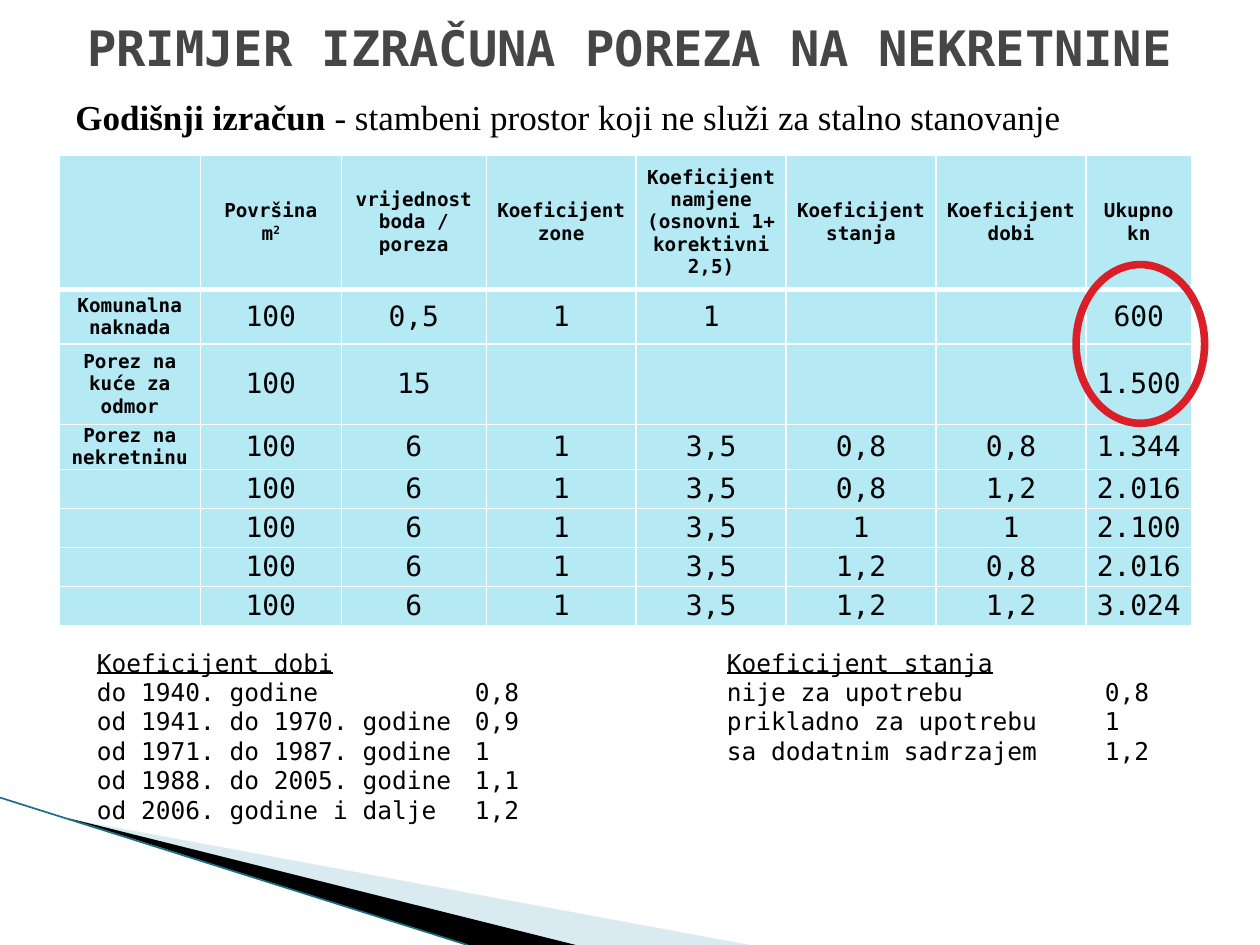
from typing import NamedTuple

from lxml.etree import SubElement
from pptx import Presentation
from pptx.dml.color import RGBColor
from pptx.enum.shapes import MSO_CONNECTOR as Connector, MSO_SHAPE as Shape
from pptx.enum.text import MSO_ANCHOR as Anchor, PP_ALIGN as Align
from pptx.oxml import parse_xml
from pptx.oxml.ns import nsdecls, qn
from pptx.util import Inches, Pt

COLORS = {
    "text": "000000", "title": "464646", "cell": "B5E9F4", "border": "FFFFFF",
    "ring": "DA1F28", "pale": "A0CBDC", "black": "000000", "edge": "1B6F82",
}
MONO, SERIF = "DejaVu Sans Mono", "Times New Roman"


class Wedge(NamedTuple):
    points: list[tuple[float, float]]
    color: str
    alpha: int


class Legend(NamedTuple):
    title: str
    entries: list[tuple[str, str]]


WEDGES = [
    Wedge([(0.55, 6.5), (5.95, 7.5), (4.56, 7.5)], "pale", 40),
    Wedge([(0.53, 6.49), (4.57, 7.5), (3.72, 7.5)], "black", 100),
]
COL_WIDTHS = [1.12, 1.12, 1.15, 1.19, 1.19, 1.19, 1.19, 0.84]
ROW_HEIGHTS = [1.07, 0.43, 0.64] + [0.31] * 5
ROWS = [
    ["", "Površina\nm²", "vrijednost boda / poreza", "Koeficijent zone",
     "Koeficijent namjene (osnovni 1+ korektivni 2,5)", "Koeficijent stanja",
     "Koeficijent dobi", "Ukupno\nkn"],
    ["Komunalna naknada", "100", "0,5", "1", "1", "", "", "600"],
    ["Porez na kuće za odmor", "100", "15", "", "", "", "", "1.500"],
    ["Porez na nekretninu", "100", "6", "1", "3,5", "0,8", "0,8", "1.344"],
    ["", "100", "6", "1", "3,5", "0,8", "1,2", "2.016"],
    ["", "100", "6", "1", "3,5", "1", "1", "2.100"],
    ["", "100", "6", "1", "3,5", "1,2", "0,8", "2.016"],
    ["", "100", "6", "1", "3,5", "1,2", "1,2", "3.024"],
]
AGE = Legend("Koeficijent dobi", [
    ("do 1940. godine", "0,8"),
    ("od 1941. do 1970. godine", "0,9"),
    ("od 1971. do 1987. godine", "1"),
    ("od 1988. do 2005. godine", "1,1"),
    ("od 2006. godine i dalje", "1,2"),
])
CONDITION = Legend("Koeficijent stanja", [
    ("nije za upotrebu", "0,8"),
    ("prikladno za upotrebu", "1"),
    ("sa dodatnim sadrzajem", "1,2"),
])
TAB_STOPS = [3, 5, 8]


def rgb(name: str) -> RGBColor:
    return RGBColor.from_string(COLORS[name])


def add_run(p, text: str, size: float, font: str = MONO, color: str = "text",
            bold: bool = False, underline: bool = False):
    r = p.add_run()
    r.text = text
    f = r.font
    f.size, f.name, f.bold, f.underline = Pt(size), font, bold, underline
    f.color.rgb = rgb(color)
    return r


def add_text_box(s, x: float, y: float, w: float, h: float):
    tf = s.shapes.add_textbox(Inches(x), Inches(y), Inches(w), Inches(h)).text_frame
    tf.word_wrap = True
    return tf


def add_wedge(s, wedge: Wedge) -> None:
    start, *rest = [(Inches(x), Inches(y)) for x, y in wedge.points]
    builder = s.shapes.build_freeform(*start)
    builder.add_line_segments(rest, close=True)
    sp = builder.convert_to_shape()
    sp.shadow.inherit = False
    sp.fill.solid()
    sp.fill.fore_color.rgb = rgb(wedge.color)
    sp.line.fill.background()
    if wedge.alpha < 100:
        clr = sp.fill._xPr.find(".//" + qn("a:srgbClr"))
        SubElement(clr, qn("a:alpha"), val=str(wedge.alpha * 1000))


def add_edge(s) -> None:
    line = s.shapes.add_connector(
        Connector.STRAIGHT, Inches(0), Inches(6.33), Inches(3.71), Inches(7.5))
    line.line.color.rgb = rgb("edge")
    line.line.width = Pt(0.95)
    SubElement(line._element.spPr, qn("a:effectLst"))


def set_borders(cell, bottom: float, top: float) -> None:
    widths = {"lnL": 1, "lnR": 1, "lnT": top, "lnB": bottom}
    for i, (tag, width) in enumerate(widths.items()):
        cell._tc.get_or_add_tcPr().insert(i, parse_xml(
            f'<a:{tag} {nsdecls("a")} w="{Pt(width)}"><a:solidFill>'
            f'<a:srgbClr val="{COLORS["border"]}"/></a:solidFill></a:{tag}>'))


def fill_cell(cell, text: str, label: bool) -> None:
    cell.fill.solid()
    cell.fill.fore_color.rgb = rgb("cell")
    cell.vertical_anchor = Anchor.MIDDLE
    cell.margin_left = cell.margin_right = Inches(0.07)
    cell.margin_top = cell.margin_bottom = 0
    for i, line in enumerate(text.split("\n") if text else []):
        tf = cell.text_frame
        p = tf.add_paragraph() if i else tf.paragraphs[0]
        p.alignment = Align.CENTER
        size = 11 if label else 16
        add_run(p, line.rstrip("²"), size, bold=label)
        if line.endswith("²"):
            r = add_run(p, "2", size, bold=label)
            r.font._element.set("baseline", "30000")


def add_tax_table(s) -> None:
    table = s.shapes.add_table(
        len(ROWS), len(COL_WIDTHS), Inches(0.47), Inches(1.23),
        Inches(sum(COL_WIDTHS)), Inches(sum(ROW_HEIGHTS))).table
    for col, width in zip(table.columns, COL_WIDTHS):
        col.width = Inches(width)
    for i, (row, height) in enumerate(zip(ROWS, ROW_HEIGHTS)):
        table.rows[i].height = Inches(height)
        for j, text in enumerate(row):
            cell = table.cell(i, j)
            fill_cell(cell, text, label=i == 0 or j == 0)
            set_borders(cell, bottom=3 if i == 0 else 1, top=3 if i == 1 else 1)


def add_tab_stops(p) -> None:
    tabs = SubElement(p._p.get_or_add_pPr(), qn("a:tabLst"))
    for stop in TAB_STOPS:
        SubElement(tabs, qn("a:tab"), pos=str(Inches(stop)), algn="l")


def add_legends(s, left: Legend, right: Legend) -> None:
    tf = add_text_box(s, 0.67, 5.09, 8.98, 1.51)
    p = tf.paragraphs[0]
    add_tab_stops(p)
    add_run(p, left.title, 14, underline=True)
    add_run(p, "\t\t", 14)
    add_run(p, right.title, 14, underline=True)
    for i, entry in enumerate(left.entries):
        p = tf.add_paragraph()
        add_tab_stops(p)
        add_run(p, "\t".join(entry + tuple(right.entries[i:i + 1][0])
                             if i < len(right.entries) else entry), 14)


def add_title(s) -> None:
    sp = s.shapes.title
    sp.left, sp.top, sp.width, sp.height = (Inches(v) for v in (0.5, 0.13, 9, 0.55))
    tf = sp.text_frame
    tf.word_wrap = True
    tf.vertical_anchor = Anchor.MIDDLE
    tf.margin_top, tf.margin_bottom = 0, Inches(0.07)
    p = tf.paragraphs[0]
    p.alignment = Align.CENTER
    add_run(p, "PRIMJER IZRAČUNA POREZA NA NEKRETNINE", 27.9, color="title", bold=True)


def add_subtitle(s) -> None:
    tf = add_text_box(s, 0.5, 0.52, 8.91, 0.62)
    tf.vertical_anchor = Anchor.BOTTOM
    p = tf.paragraphs[0]
    p.alignment = Align.JUSTIFY
    add_run(p, "Godišnji izračun ", 20, SERIF, bold=True)
    add_run(p, "- stambeni prostor koji ne služi za stalno stanovanje", 20, SERIF)


def add_ring(s) -> None:
    sp = s.shapes.add_shape(Shape.OVAL, Inches(8.54), Inches(2.1), Inches(1.02), Inches(1.26))
    sp.shadow.inherit = False
    sp.fill.background()
    sp.line.color.rgb = rgb("ring")
    sp.line.width = Pt(4.33)


def main() -> None:
    prs = Presentation()
    prs.slide_width, prs.slide_height = Inches(10), Inches(7.5)
    s = prs.slides.add_slide(prs.slide_layouts[5])
    for wedge in WEDGES:
        add_wedge(s, wedge)
    add_edge(s)
    add_tax_table(s)
    add_subtitle(s)
    add_title(s)
    add_ring(s)
    add_legends(s, AGE, CONDITION)
    prs.save("out.pptx")


if __name__ == "__main__":
    main()
